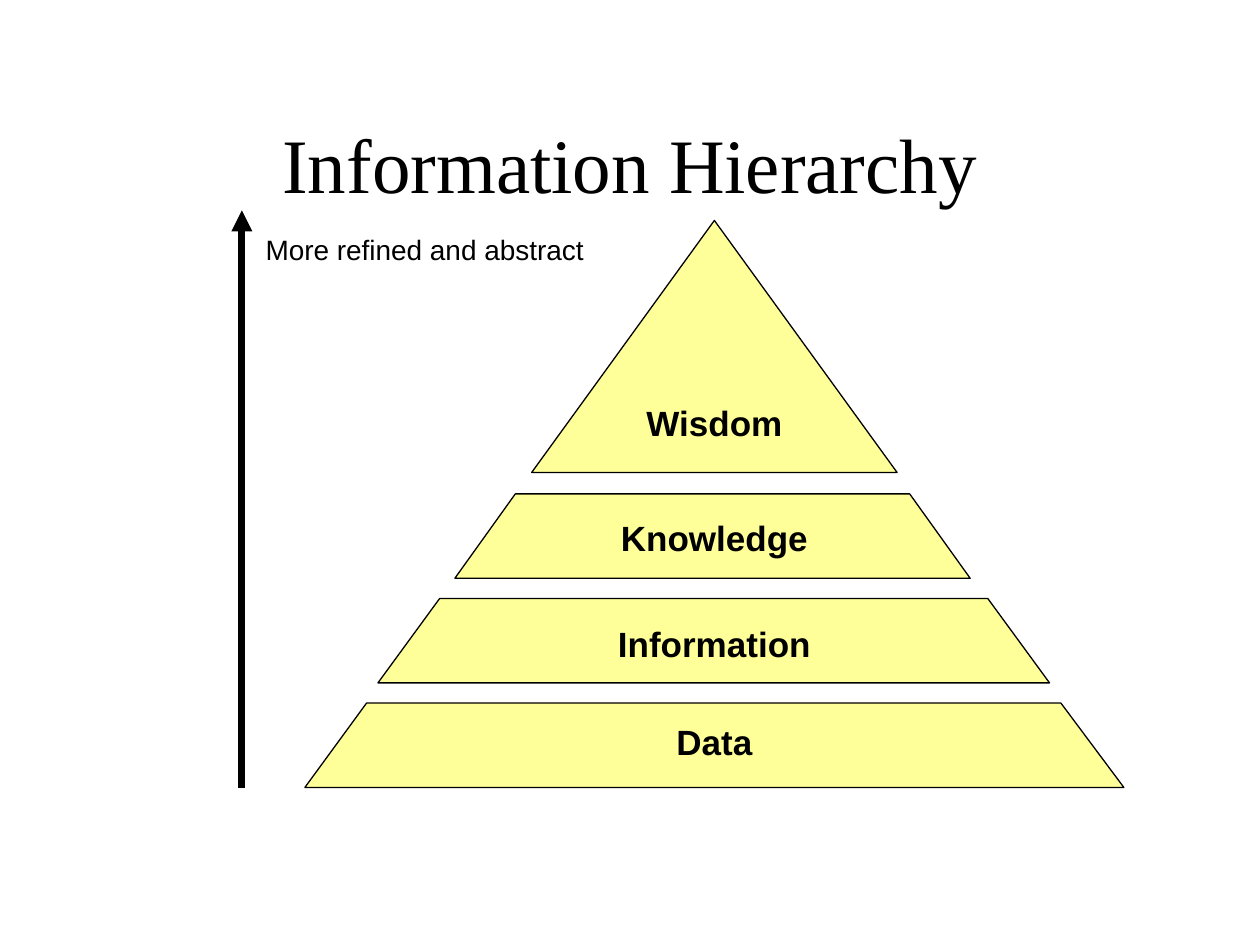
"""Build the Information Hierarchy pyramid slide."""
import lxml.etree
import pptx
import pptx.dml.color
import pptx.enum.shapes
import pptx.enum.text
import pptx.oxml.ns
import pptx.util

Inches = pptx.util.Inches
ALIGN = pptx.enum.text.PP_ALIGN
ANCHOR = pptx.enum.text.MSO_ANCHOR


def color(value):
    return pptx.dml.color.RGBColor.from_string(value)


class HierarchySlide:
    ink = "000000"
    tier_fill = "FFFF99"

    def __init__(self, slide):
        self.slide = slide
        self.shapes = slide.shapes

    def style_text(self, frame, text, size, font="Arial", bold=False, align=ALIGN.CENTER):
        frame.text = text
        paragraph = frame.paragraphs[0]
        paragraph.alignment = align
        paragraph.font.name = font
        paragraph.font.size = pptx.util.Pt(size)
        paragraph.font.bold = bold
        paragraph.font.color.rgb = color(self.ink)

    def style_tier(self, tier):
        tier.shadow.inherit = False
        tier.fill.solid()
        tier.fill.fore_color.rgb = color(self.tier_fill)
        tier.line.color.rgb = color(self.ink)
        tier.line.width = pptx.util.Pt(0.75)

    def title(self, text, left, top, width, height):
        heading = self.shapes.title
        heading.left, heading.top = Inches(left), Inches(top)
        heading.width, heading.height = Inches(width), Inches(height)
        heading.text_frame.vertical_anchor = ANCHOR.MIDDLE
        self.style_text(heading.text_frame, text, 44, font="Times New Roman")

    def label(self, text, left, top, width, height, size=20, bold=True,
              align=ALIGN.CENTER, wrap=True):
        box = self.shapes.add_textbox(Inches(left), Inches(top), Inches(width), Inches(height))
        box.text_frame.word_wrap = wrap
        box.text_frame.auto_size = pptx.enum.text.MSO_AUTO_SIZE.SHAPE_TO_FIT_TEXT
        self.style_text(box.text_frame, text, size, bold=bold, align=align)

    def peak(self, left, top, width, height):
        triangle = pptx.enum.shapes.MSO_SHAPE.ISOSCELES_TRIANGLE
        self.style_tier(self.shapes.add_shape(
            triangle, Inches(left), Inches(top), Inches(width), Inches(height)))

    def band(self, top, bottom, base_left, top_left, top_right, base_right):
        corners = [(top_left, top), (top_right, top), (base_right, bottom)]
        outline = self.shapes.build_freeform(Inches(base_left), Inches(bottom))
        outline.add_line_segments([(Inches(x), Inches(y)) for x, y in corners], close=True)
        self.style_tier(outline.convert_to_shape())

    def arrow(self, x, start_y, end_y):
        shaft = self.shapes.add_connector(
            pptx.enum.shapes.MSO_CONNECTOR.STRAIGHT,
            Inches(x), Inches(start_y), Inches(x), Inches(end_y))
        shaft.line.color.rgb = color(self.ink)
        shaft.line.width = pptx.util.Pt(4)
        qn = pptx.oxml.ns.qn
        lxml.etree.SubElement(shaft.line._get_or_add_ln(), qn("a:tailEnd"), type="triangle")
        lxml.etree.SubElement(shaft._element.spPr, qn("a:effectLst"))


def main():
    deck = pptx.Presentation()
    deck.slide_width, deck.slide_height = Inches(10), Inches(7.5)
    page = HierarchySlide(deck.slides.add_slide(deck.slide_layouts[5]))
    page.title("Information Hierarchy", 0.75, 0.67, 8.5, 1.25)

    center, base, pitch, band_height = 5.67, 6.25, 0.83, 0.67
    bands = [
        ("Data", 5.67, (2.42, 2.91, 8.42, 8.92)),
        ("Information", 4.89, (3, 3.49, 7.84, 8.33)),
        ("Knowledge", 4.05, (3.61, 4.09, 7.22, 7.7)),
    ]
    for level, (name, label_top, edges) in enumerate(bands):
        bottom = base - level * pitch
        page.band(bottom - band_height, bottom, *edges)
        page.label(name, center - 1.02, label_top, 2.04, 0.43)

    page.peak(4.22, 1.75, 2.9, 2)
    page.label("Wisdom", center - 0.75, 3.14, 1.5, 0.43)

    page.arrow(1.92, base, 1.67)
    page.label("More refined and abstract", 2.01, 1.8, 2.74, 0.37,
               size=16, bold=False, align=ALIGN.LEFT, wrap=False)
    deck.save("out.pptx")


if __name__ == "__main__":
    main()
